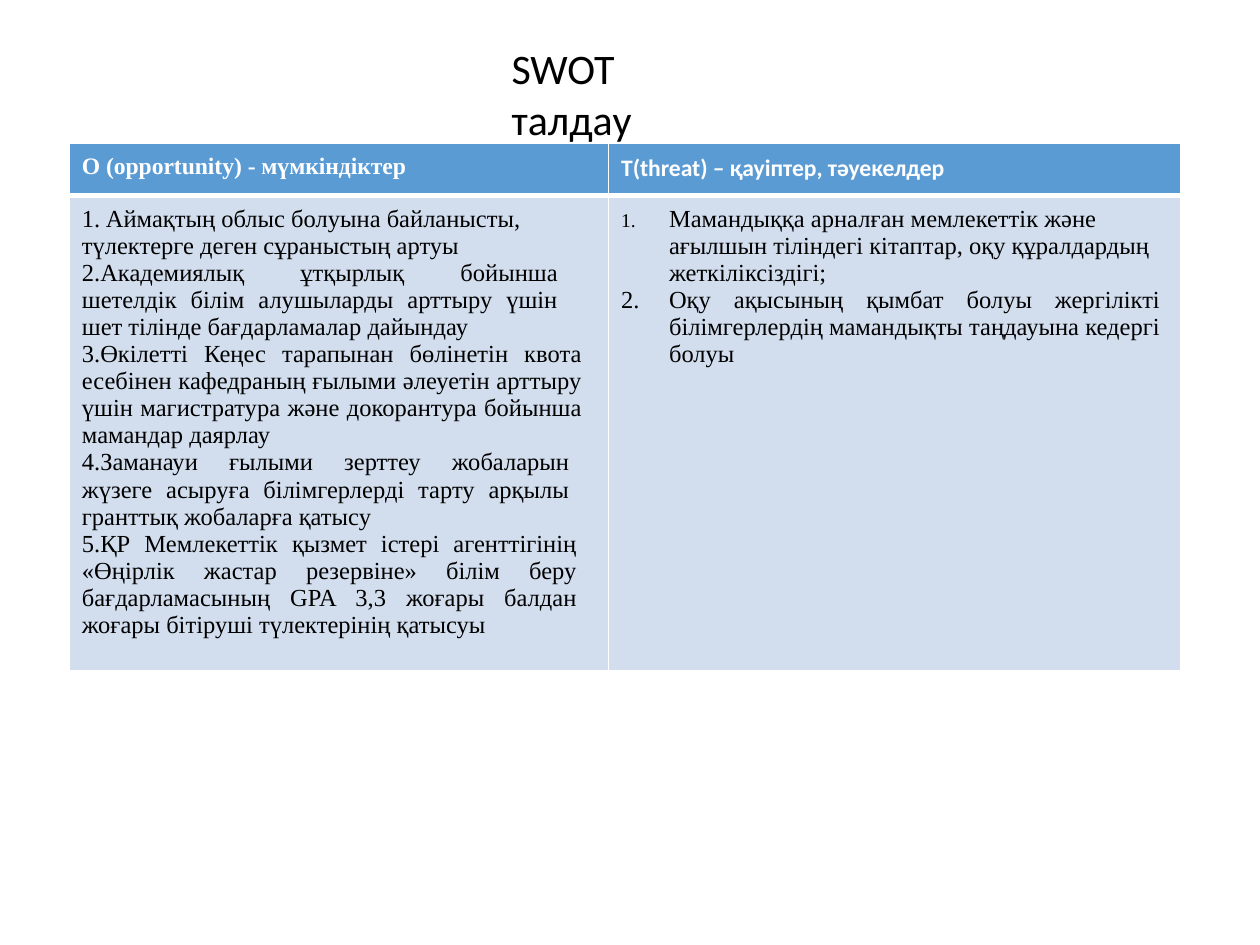
"""Build the SWOT slide on opportunities and threats."""
from lxml import etree
from pptx import Presentation
from pptx.dml.color import RGBColor
from pptx.enum.text import MSO_ANCHOR, MSO_AUTO_SIZE, PP_ALIGN
from pptx.oxml.ns import qn
from pptx.util import Inches, Pt

LEFT, JUSTIFY = PP_ALIGN.LEFT, PP_ALIGN.JUSTIFY
TOP, NO_AUTOFIT = MSO_ANCHOR.TOP, MSO_AUTO_SIZE.NONE
COLORS = {"text": "000000", "white": "FFFFFF", "header": "5B9BD4", "body": "D2DEEE"}
SERIF, SANS = "Times New Roman", "Calibri"

TITLE = "SWOT талдау"
HEADERS = [
    ("O (opportunity) - мүмкіндіктер", SERIF),
    ("T(threat) – қауіптер, тәуекелдер", SANS),
]
# text, left margin, indent, right margin, first number, number size in percent
OPPORTUNITIES = [
    ("Аймақтың облыс болуына байланысты,", 0.29, -0.19, 0, 1, 100),
    ("түлектерге деген сұраныстың артуы", 0.1, 0, 0, None, 100),
    ("Академиялық ұтқырлық бойынша шетелдік білім алушыларды арттыру үшін "
     "шет тілінде бағдарламалар дайындау", 0.1, 0, 0.4, 2, 100),
    ("Өкілетті Кеңес тарапынан бөлінетін квота есебінен кафедраның ғылыми "
     "әлеуетін арттыру үшін магистратура және докорантура бойынша мамандар даярлау",
     0.1, 0, 0.21, 2, 100),
    ("Заманауи ғылыми зерттеу жобаларын жүзеге асыруға білімгерлерді тарту "
     "арқылы гранттық жобаларға қатысу", 0.1, 0, 0.31, 2, 100),
    ("5.ҚР Мемлекеттік қызмет істері агенттігінің «Өңірлік жастар резервіне» "
     "білім беру бағдарламасының GPA 3,3 жоғары балдан жоғары бітіруші "
     "түлектерінің қатысуы", 0.1, 0, 0.25, None, 100),
]
THREATS = [
    ("Мамандыққа арналған мемлекеттік және", 0.48, -0.38, 0, 1, 79),
    ("ағылшын тіліндегі кітаптар, оқу құралдардың", 0.48, 0, 0, None, 100),
    ("жеткіліксіздігі;", 0.48, 0, 0, None, 100),
    ("Оқу ақысының қымбат болуы жергілікті білімгерлердің мамандықты "
     "таңдауына кедергі болуы", 0.48, -0.38, 0.16, 2, 100),
]
COLUMN_WIDTHS = [4.28, 4.54]
ROW_HEIGHTS = [0.41, 3.77]


def set_font(paragraph, family, size, color, bold=False):
    font = paragraph.font
    font.name, font.size, font.bold = family, Pt(size), bold
    font.color.rgb = RGBColor.from_string(COLORS[color])


def set_indents(paragraph, left, indent=0, right=0):
    properties = paragraph._p.get_or_add_pPr()
    for key, value in (("marL", left), ("marR", right), ("indent", indent)):
        properties.set(key, str(int(Inches(value))))
    return properties


def add_number(properties, start, percent, tab):
    if start:
        etree.SubElement(properties, qn("a:buSzPct"), val=str(percent * 1000))
        etree.SubElement(properties, qn("a:buAutoNum"), type="arabicPeriod", startAt=str(start))
    else:
        etree.SubElement(properties, qn("a:buNone"))
    tabs = etree.SubElement(properties, qn("a:tabLst"))
    etree.SubElement(tabs, qn("a:tab"), pos=str(int(Inches(tab))), algn="l")


def style_cell(cell, fill, top_width, bottom_width):
    cell.margin_left = cell.margin_right = cell.margin_bottom = 0
    cell.margin_top = Inches(0.08)
    cell.vertical_anchor = TOP
    properties = cell._tc.get_or_add_tcPr()
    for side, width in (("L", 1), ("R", 1), ("T", top_width), ("B", bottom_width)):
        border = etree.SubElement(properties, qn(f"a:ln{side}"), w=str(int(Pt(width))))
        solid = etree.SubElement(border, qn("a:solidFill"))
        etree.SubElement(solid, qn("a:srgbClr"), val=COLORS["white"])
    cell.fill.solid()
    cell.fill.fore_color.rgb = RGBColor.from_string(COLORS[fill])


def add_title(slide):
    title = slide.shapes.title
    title.left, title.top = Inches(4.05), Inches(0.32)
    title.width, title.height = Inches(1.83), Inches(0.43)
    frame = title.text_frame
    frame.text = TITLE
    frame.word_wrap, frame.auto_size, frame.vertical_anchor = True, NO_AUTOFIT, TOP
    frame.margin_left = Inches(0.01)
    frame.margin_right = frame.margin_bottom = 0
    frame.margin_top = Inches(0.02)
    frame.paragraphs[0].alignment = LEFT
    set_font(frame.paragraphs[0], SANS, 24, "text")


def add_swot_table(slide):
    table = slide.shapes.add_table(
        len(ROW_HEIGHTS), len(COLUMN_WIDTHS), Inches(0.55), Inches(1.14),
        Inches(sum(COLUMN_WIDTHS)), Inches(sum(ROW_HEIGHTS))).table
    for column, width in zip(table.columns, COLUMN_WIDTHS):
        column.width = Inches(width)
    for row, height in zip(table.rows, ROW_HEIGHTS):
        row.height = Inches(height)

    for index, (heading, family) in enumerate(HEADERS):
        cell = table.cell(0, index)
        cell.text = heading
        style_cell(cell, "header", 1, 3)
        set_indents(cell.text_frame.paragraphs[0], 0.1)
        set_font(cell.text_frame.paragraphs[0], family, 13.5, "white", True)

    for index, points in enumerate((OPPORTUNITIES, THREATS)):
        cell = table.cell(1, index)
        cell.text = "\n".join(point[0] for point in points)
        style_cell(cell, "body", 3, 1)
        tab = points[0][1]
        for paragraph, point in zip(cell.text_frame.paragraphs, points):
            _, left, indent, right, start, percent = point
            paragraph.alignment = JUSTIFY
            properties = set_indents(paragraph, left, indent, right)
            add_number(properties, start, percent, tab)
            set_font(paragraph, SERIF, 14, "text")


def main():
    deck = Presentation()
    deck.slide_width, deck.slide_height = Inches(10), Inches(7.5)
    slide = deck.slides.add_slide(deck.slide_layouts[5])
    add_title(slide)
    add_swot_table(slide)
    deck.save("out.pptx")


if __name__ == "__main__":
    main()
